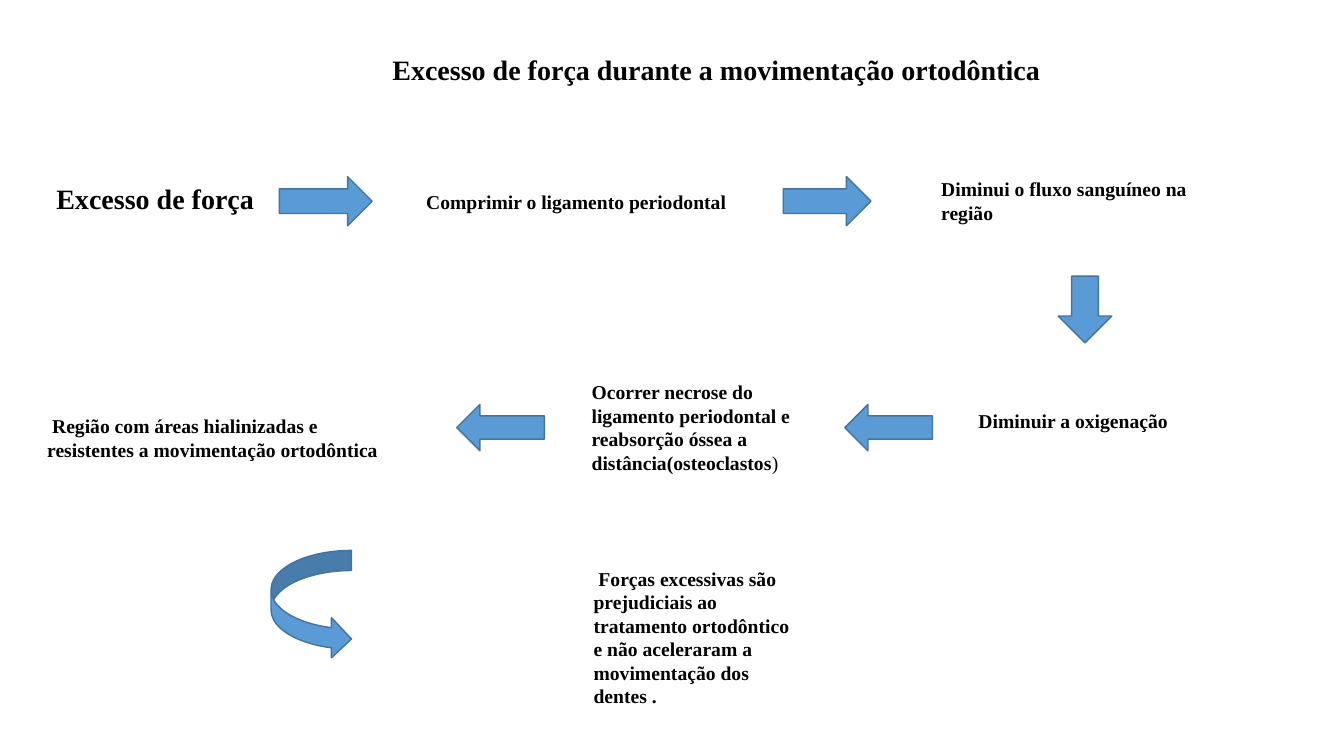
from pptx import Presentation
from pptx.dml.color import RGBColor
from pptx.enum.shapes import MSO_SHAPE
from pptx.enum.text import MSO_ANCHOR, MSO_AUTO_SIZE, PP_ALIGN
from pptx.util import Cm, Pt

# Content: boxes are left, top, width, height in cm
TITLE = "Excesso de força durante a movimentação ortodôntica"
TITLE_BOX = (3.45, 0.86, 29.21, 1.9)

# Text, box, size, wrapped, plain ending
STEPS = [
    ("Excesso de força", (1.17, 4.45, 5.54, 1.12), 20, False, ""),
    ("Comprimir o ligamento periodontal", (10.49, 4.65, 8.13, 0.86), 14, False, ""),
    ("Diminui o fluxo sanguíneo na região", (23.47, 4.34, 7.75, 1.45), 14, True, ""),
    ("Diminuir a oxigenação", (24.41, 10.19, 5.33, 0.86), 14, False, ""),
    ("Ocorrer necrose do ligamento periodontal e reabsorção óssea a "
     "distância(osteoclastos", (14.66, 9.45, 5.66, 2.64), 14, True, ")"),
    (" Região com áreas hialinizadas e resistentes a movimentação ortodôntica",
     (0.94, 10.31, 9.63, 1.45), 14, True, ""),
    (" Forças excessivas são prejudiciais ao tratamento ortodôntico e não "
     "aceleraram a movimentação dos dentes .", (14.71, 14.15, 5.61, 3.84), 14, True, ""),
]

ARROWS = [
    (MSO_SHAPE.RIGHT_ARROW, (7.04, 4.45, 2.34, 1.24)),
    (MSO_SHAPE.RIGHT_ARROW, (19.74, 4.45, 2.21, 1.24)),
    (MSO_SHAPE.DOWN_ARROW, (26.67, 6.96, 1.35, 1.68)),
    (MSO_SHAPE.LEFT_ARROW, (21.29, 10.19, 2.21, 1.17)),
    (MSO_SHAPE.LEFT_ARROW, (11.51, 10.19, 2.21, 1.17)),
    (MSO_SHAPE.CURVED_RIGHT_ARROW, (6.83, 13.87, 2.03, 2.74)),
]

FONT = "Times New Roman"
BLACK = RGBColor(0x00, 0x00, 0x00)
BLUE = RGBColor(0x5B, 0x9B, 0xD5)
EDGE = RGBColor(0x43, 0x73, 0x9E)


def write(para, text, size=14, bold=True, color=BLACK):
    run = para.add_run()
    run.text = text
    font = run.font
    font.name, font.size, font.bold = FONT, Pt(size), bold
    font.color.rgb = color


def scale(box):
    return [Cm(side) for side in box]


deck = Presentation()
deck.slide_width, deck.slide_height = Cm(33.87), Cm(19.05)
slide = deck.slides.add_slide(deck.slide_layouts[5])

# Title
title = slide.shapes.title
title.left, title.top, title.width, title.height = scale(TITLE_BOX)
title.text_frame.vertical_anchor = MSO_ANCHOR.MIDDLE
head = title.text_frame.paragraphs[0]
head.alignment = PP_ALIGN.CENTER
head.line_spacing = 0.9
write(head, TITLE, size=20)

# Steps of the chain
for text, box, size, wrap, tail in STEPS:
    frame = slide.shapes.add_textbox(*scale(box)).text_frame
    frame.word_wrap = wrap
    frame.auto_size = MSO_AUTO_SIZE.SHAPE_TO_FIT_TEXT
    para = frame.paragraphs[0]
    write(para, text, size=size)
    if tail:
        write(para, tail, size=size, bold=False)

# Arrows between the steps
for kind, box in ARROWS:
    arrow = slide.shapes.add_shape(kind, *scale(box))
    arrow.shadow.inherit = False
    arrow.fill.solid()
    arrow.fill.fore_color.rgb = BLUE
    arrow.line.color.rgb = EDGE
    arrow.line.width = Pt(1)

deck.save("out.pptx")
